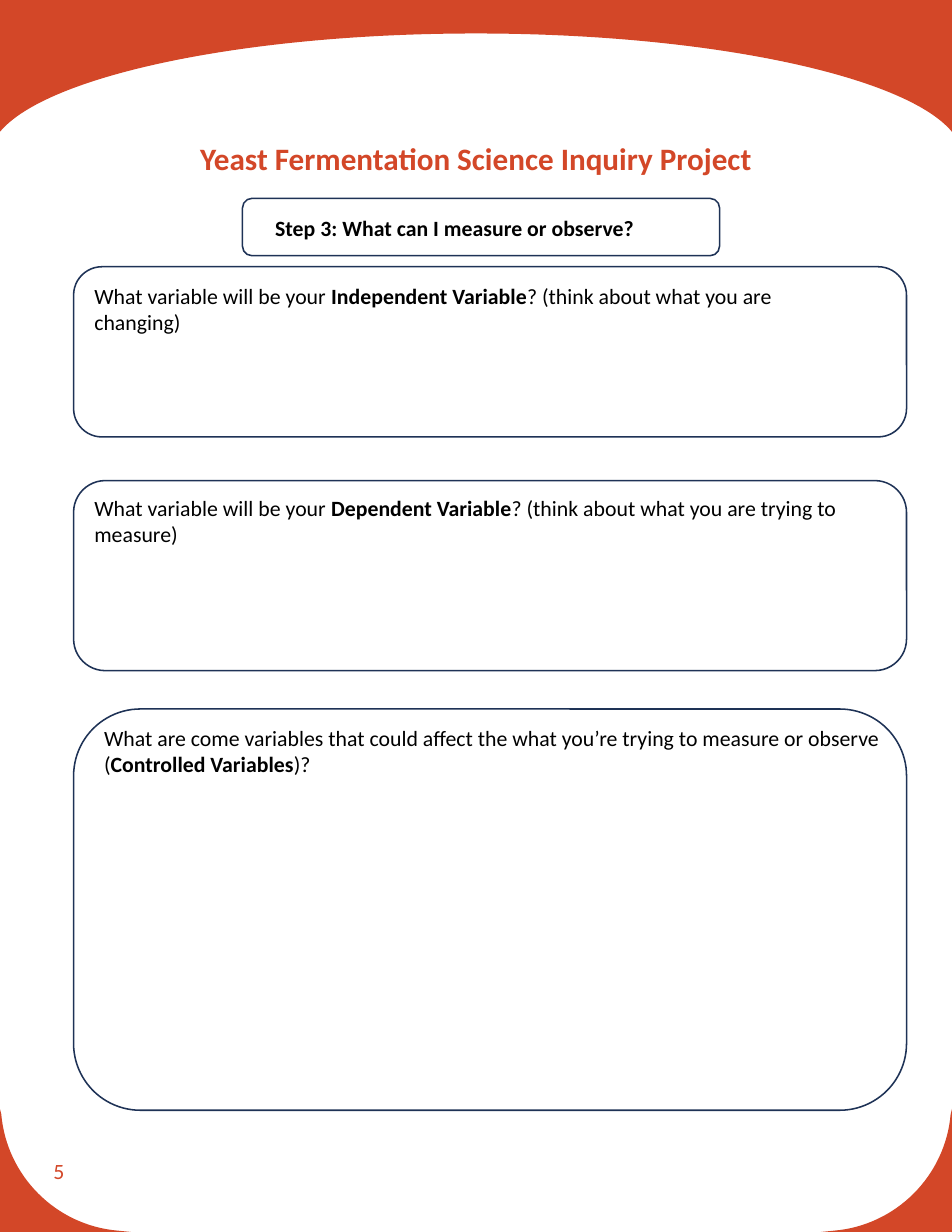
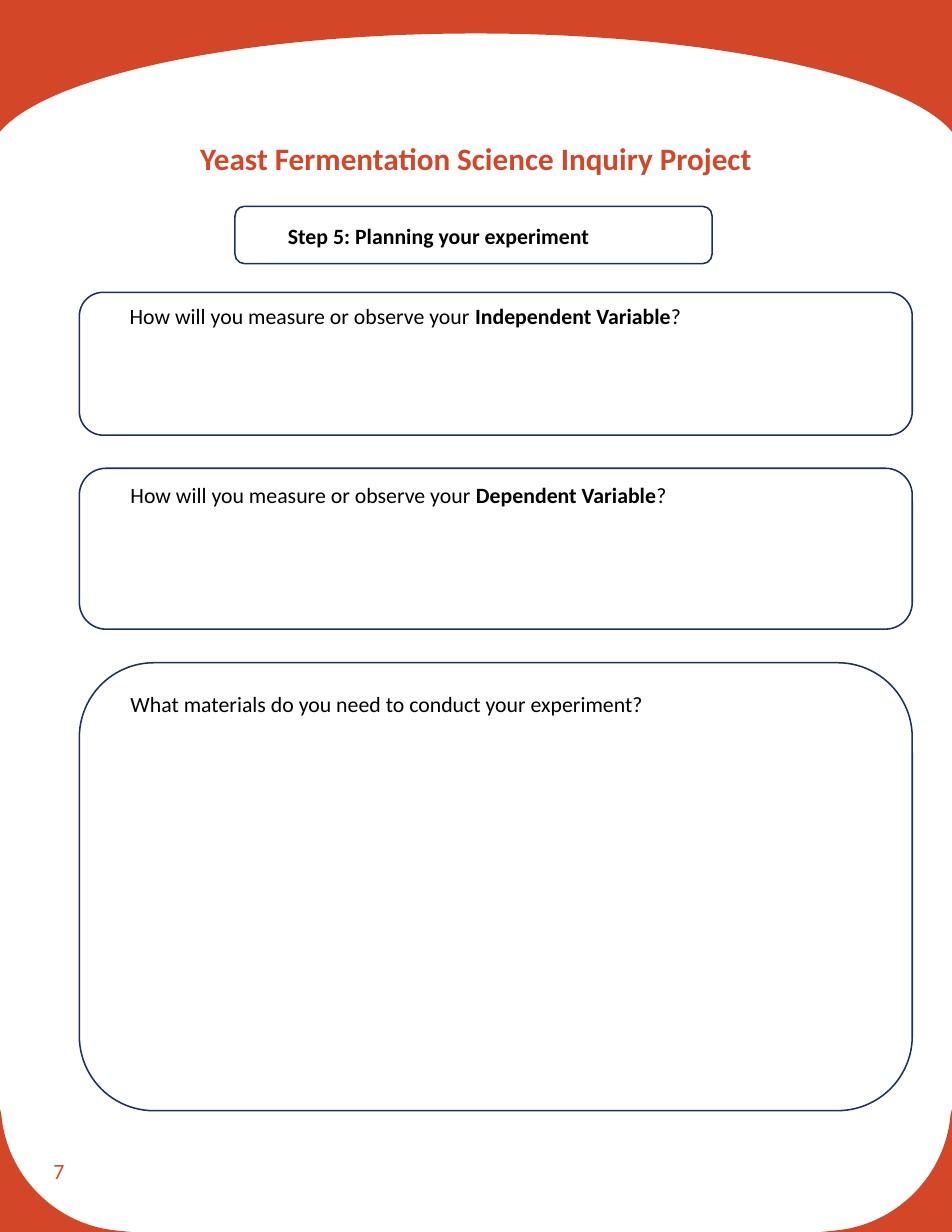
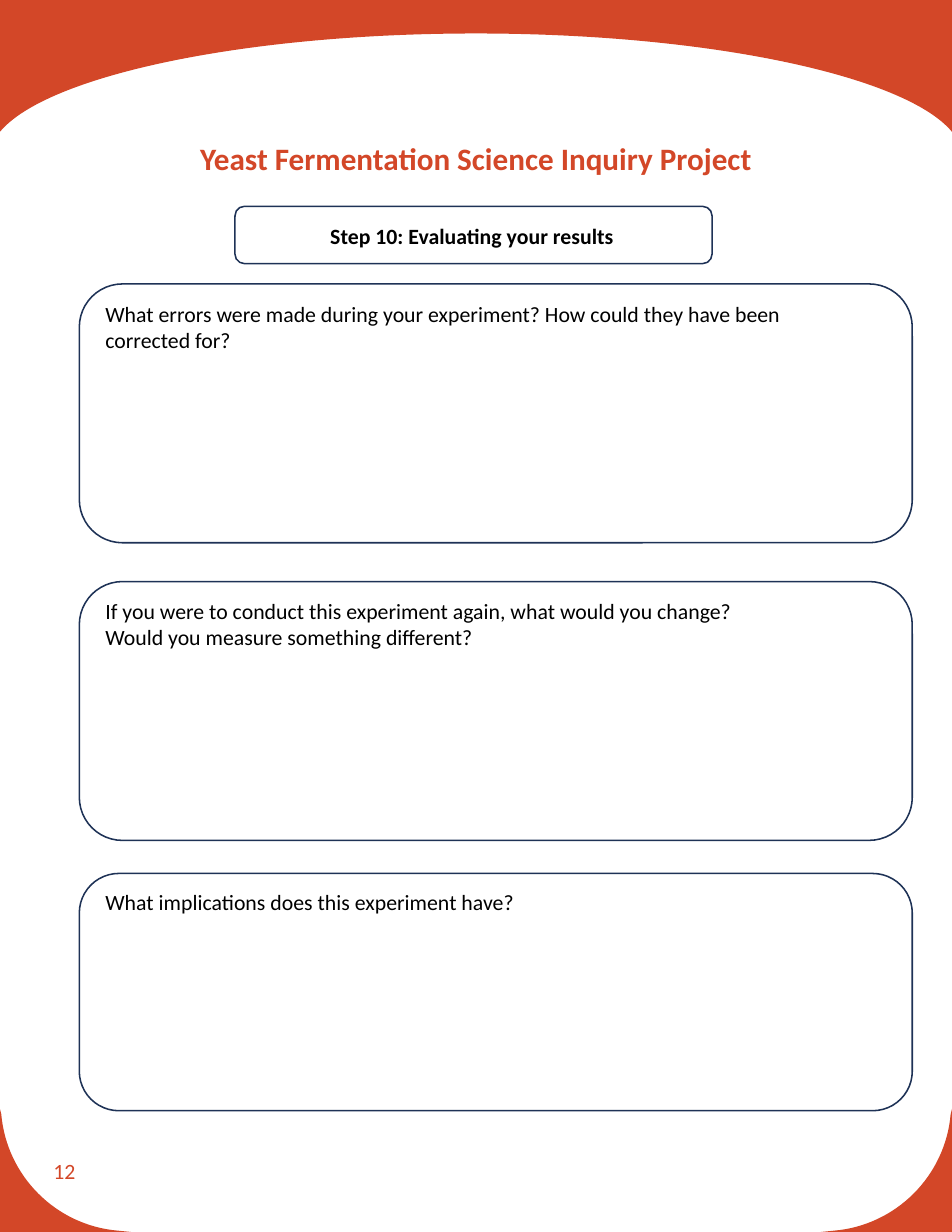
from lxml.etree import Element
from pptx import Presentation
from pptx.dml.color import RGBColor
from pptx.enum.shapes import MSO_SHAPE, PP_PLACEHOLDER
from pptx.enum.text import MSO_ANCHOR, MSO_AUTO_SIZE, PP_ALIGN
from pptx.oxml.ns import qn
from pptx.util import Cm, Pt

PAGE_WIDTH, PAGE_HEIGHT = 21.59, 27.94
ORANGE, NAVY, BLACK, WHITE = "D34728", "1E3256", "000000", "FFFFFF"
FONT = "Calibri"
TITLE = "Yeast Fermentation Science Inquiry Project"
STEP_SIZE = (10.82, 1.3)
PANEL_WIDTH = 18.89

# Each page: number, left edge of the panels, step box and panels.
# Step: corner of frame, text box, wording.
# Panel: top and height of frame, fill, text box, paragraphs (** marks bold).
PAGES = [
    ("5", 1.67,
     ((5.5, 4.5), (5.99, 4.75, 10.49, 0.86), "Step 3: What can I measure or observe?"),
     [
         (6.05, 3.86, None, (1.89, 6.29, 18.8, 1.45),
          ["What variable will be your **Independent Variable**? (think about what you are",
           "changing)"]),
         (10.9, 4.31, WHITE, (1.89, 11.1, 18.44, 1.45),
          ["What variable will be your **Dependent Variable**? "
           "(think about what you are trying to measure)"]),
         (16.08, 9.1, None, (2.11, 16.31, 18.44, 1.45),
          ["What are come variables that could affect the what you’re trying to measure "
           "or observe (**Controlled Variables**)?"]),
     ]),
    ("7", 1.8,
     ((5.33, 4.68), (6.28, 4.93, 10.49, 0.86), "Step 5: Planning your experiment"),
     [
         (6.63, 3.24, None, (2.69, 6.75, 17.98, 0.64),
          ["How will you measure or observe your **Independent Variable**?"]),
         (10.62, 3.65, None, (2.71, 10.8, 17.98, 0.71),
          ["How will you measure or observe your **Dependent Variable**?"]),
         (15.03, 10.16, None, (2.71, 15.54, 17.98, 1.98),
          ["What materials do you need to conduct your experiment?"]),
     ]),
    ("12", 1.8,
     ((5.33, 4.68), (7.24, 4.93, 10.49, 0.86), "Step 10: Evaluating your results"),
     [
         (6.44, 5.87, None, (2.14, 6.69, 18.92, 1.45),
          ["What errors were made during your experiment? How could they have been",
           "corrected for?"]),
         (13.19, 5.87, None, (2.14, 13.43, 17.45, 1.45),
          ["If you were to conduct this experiment again, what would you change?",
           "Would you measure something different?"]),
         (19.81, 5.38, None, (2.14, 20.04, 11.48, 0.86),
          ["What implications does this experiment have?"]),
     ]),
]

# Outlines of the bands; a curve is two control points and an end point.
TOP_BAND = [
    (0, 0), (PAGE_WIDTH, 0), (PAGE_WIDTH, 2.99),
    (20.55, 1.73), (16.1, 0.76), (PAGE_WIDTH / 2, 0.76),
    (5.49, 0.76), (1.04, 1.73), (0, 2.99),
]
TOP_CURVES = (2, 5)
LEFT_CORNER = [
    (0, 25.15), (0.03, 25.27),
    (0.15, 26.67), (1.27, 27.79), (2.67, 27.91),
    (2.97, PAGE_HEIGHT), (0, PAGE_HEIGHT),
]
RIGHT_CORNER = [(PAGE_WIDTH - x, y) for x, y in LEFT_CORNER]
CORNER_CURVES = (1,)


def color(value):
    return RGBColor.from_string(value)


def format_span(span, size, value, bold=False):
    span.font.name = FONT
    span.font.size = Pt(size)
    span.font.bold = bold
    span.font.color.rgb = color(value)


def add_band(page, points, curves):
    """Draw an outline; each index in curves turns three lines into one curve."""
    corners = [(Cm(x), Cm(y)) for x, y in points]
    builder = page.shapes.build_freeform(*corners[0])
    builder.add_line_segments(corners[1:], close=True)
    band = builder.convert_to_shape()
    lines = list(band.element.iter(qn("a:lnTo")))
    for start in curves:
        curve = Element(qn("a:cubicBezTo"))
        lines[start].addprevious(curve)
        for line in lines[start:start + 3]:
            curve.append(line[0])
            line.getparent().remove(line)
    band.shadow.inherit = False
    band.fill.solid()
    band.fill.fore_color.rgb = color(ORANGE)
    band.line.fill.background()
    return band


def move_bands_to_layout(page, layout):
    """Draw the orange bands and hand them to the layout all pages share."""
    for holder in list(layout.placeholders):
        if holder.placeholder_format.type != PP_PLACEHOLDER.TITLE:
            holder.element.getparent().remove(holder.element)
    bands = [
        add_band(page, TOP_BAND, TOP_CURVES),
        add_band(page, LEFT_CORNER, CORNER_CURVES),
        add_band(page, RIGHT_CORNER, CORNER_CURVES),
    ]
    for index, band in enumerate(bands, start=2):
        layout.shapes.element.insert(index, band.element)


def add_title(page):
    title = page.shapes.title
    title.left, title.top = Cm(0.9), Cm(2.77)
    title.width, title.height = Cm(19.79), Cm(2.18)
    frame = title.text_frame
    frame.text = TITLE
    frame.auto_size = MSO_AUTO_SIZE.NONE
    frame.vertical_anchor = MSO_ANCHOR.TOP
    frame.margin_top = Cm(0.38)
    para = frame.paragraphs[0]
    para.alignment = PP_ALIGN.CENTER
    format_span(para.runs[0], 20, ORANGE, bold=True)


def add_text(shapes, box, paragraphs, value=BLACK, anchor=MSO_ANCHOR.TOP):
    """Write paragraphs in a text box; **…** marks bold."""
    frame = shapes.add_textbox(*map(Cm, box)).text_frame
    frame.word_wrap = True
    frame.vertical_anchor = anchor
    for index, wording in enumerate(paragraphs):
        para = frame.add_paragraph() if index else frame.paragraphs[0]
        for position, part in enumerate(wording.split("**")):
            if part:
                span = para.add_run()
                span.text = part
                format_span(span, 14, value, bold=position % 2 == 1)


def add_panel(page, frame_box, text_box, paragraphs, fill=None):
    """Group a rounded frame with its text."""
    group = page.shapes.add_group_shape()
    frame = group.shapes.add_shape(MSO_SHAPE.ROUNDED_RECTANGLE, *map(Cm, frame_box))
    frame.shadow.inherit = False
    if fill:
        frame.fill.solid()
        frame.fill.fore_color.rgb = color(fill)
    else:
        frame.fill.background()
    frame.line.color.rgb = color(NAVY)
    frame.line.width = Pt(1)
    add_text(group.shapes, text_box, paragraphs)


def main():
    deck = Presentation()
    deck.slide_width, deck.slide_height = Cm(PAGE_WIDTH), Cm(PAGE_HEIGHT)
    layout = deck.slide_layouts[5]
    for number, left, (step_corner, step_text, step), panels in PAGES:
        page = deck.slides.add_slide(layout)
        if len(deck.slides) == 1:
            move_bands_to_layout(page, layout)
        add_title(page)
        add_text(page.shapes, (0.96, 25.81, 4.85, 1.5), [number], ORANGE, MSO_ANCHOR.MIDDLE)
        add_panel(page, step_corner + STEP_SIZE, step_text, [f"**{step}**"])
        for top, height, fill, text_box, paragraphs in panels:
            add_panel(page, (left, top, PANEL_WIDTH, height), text_box, paragraphs, fill)
    deck.save("out.pptx")


if __name__ == "__main__":
    main()
